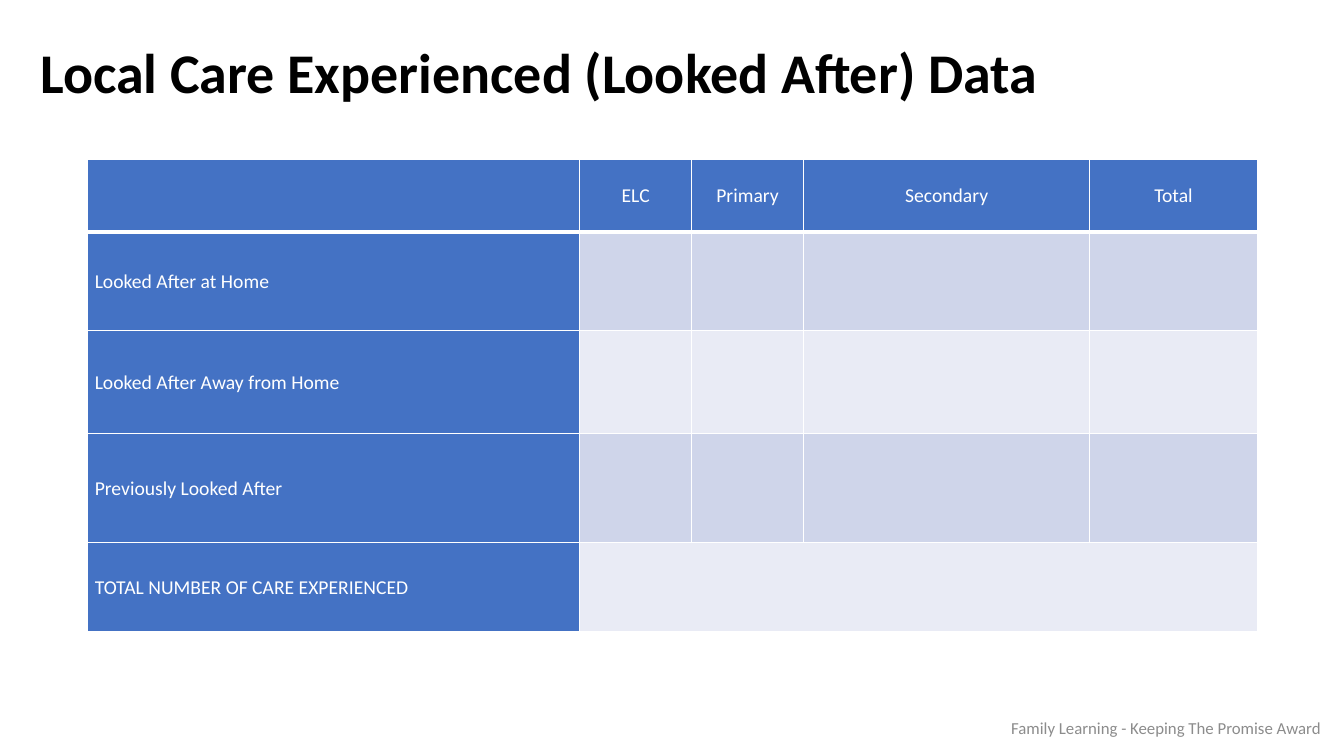
from dataclasses import dataclass

from lxml import etree
from pptx import Presentation
from pptx.dml.color import RGBColor
from pptx.enum.text import MSO_ANCHOR, MSO_AUTO_SIZE, PP_ALIGN
from pptx.oxml.ns import qn
from pptx.util import Inches, Pt

LEFT, CENTER, RIGHT = PP_ALIGN.LEFT, PP_ALIGN.CENTER, PP_ALIGN.RIGHT
TOP, MIDDLE = MSO_ANCHOR.TOP, MSO_ANCHOR.MIDDLE
NO_FIT = MSO_AUTO_SIZE.NONE
TITLE_ONLY = 5


@dataclass(frozen=True)
class Theme:
    font: str = "Calibri"
    ink: str = "000000"
    muted: str = "8C8C8C"
    white: str = "FFFFFF"
    heading: str = "4472C4"
    bands: tuple = ("CFD5EA", "E9EBF5")
    title_size: int = 40
    table_size: int = 14
    footer_size: int = 12
    thin_line: int = 1
    thick_line: int = 3


THEME = Theme()
STAGES = ["ELC", "Primary", "Secondary", "Total"]
GROUPS = [
    "Looked After at Home",
    "Looked After Away from Home",
    "Previously Looked After",
    "TOTAL NUMBER OF CARE EXPERIENCED",
]
COLUMN_WIDTHS = [4.88, 1.11, 1.11, 2.84, 1.66]
ROW_HEIGHTS = [0.72, 0.98, 1.02, 1.08, 0.89]


def place(shape, box):
    shape.left, shape.top, shape.width, shape.height = map(Inches, box)


def write(frame, text, size, color, align=LEFT, bold=False):
    para = frame.paragraphs[0]
    para.alignment = align
    para.line_spacing = 1.0
    span = para.add_run()
    span.text = text
    span.font.name = THEME.font
    span.font.size = Pt(size)
    span.font.bold = bold
    span.font.color.rgb = RGBColor.from_string(color)


def add_title(page, box, text):
    title = page.shapes.title
    place(title, box)
    frame = title.text_frame
    frame.word_wrap = True
    frame.auto_size = NO_FIT
    frame.vertical_anchor = TOP
    write(frame, text, THEME.title_size, THEME.ink, bold=True)


def add_footer(page, box, text):
    frame = page.shapes.add_textbox(*map(Inches, box)).text_frame
    frame.word_wrap = True
    frame.vertical_anchor = MIDDLE
    write(frame, text, THEME.footer_size, THEME.muted, RIGHT)


def set_borders(cell, bottom_width):
    properties = cell._tc.get_or_add_tcPr()
    widths = {"a:lnL": THEME.thin_line, "a:lnR": THEME.thin_line,
              "a:lnT": THEME.thin_line, "a:lnB": bottom_width}
    for index, (side, width) in enumerate(widths.items()):
        line = etree.Element(qn(side), w=str(Pt(width)))
        fill = etree.SubElement(line, qn("a:solidFill"))
        etree.SubElement(fill, qn("a:srgbClr"), val=THEME.white)
        properties.insert(index, line)


def style_cell(cell, row, column):
    is_heading = row == 0 or column == 0
    color = THEME.heading if is_heading else THEME.bands[(row - 1) % 2]
    cell.fill.solid()
    cell.fill.fore_color.rgb = RGBColor.from_string(color)
    cell.vertical_anchor = MIDDLE
    cell.margin_left = cell.margin_right = Inches(0.07)
    cell.margin_top, cell.margin_bottom = Inches(0.01), Inches(0)
    set_borders(cell, THEME.thick_line if row == 0 else THEME.thin_line)


def add_data_table(page, box):
    table = page.shapes.add_table(
        len(ROW_HEIGHTS), len(COLUMN_WIDTHS), *map(Inches, box)).table
    for column, width in zip(table.columns, COLUMN_WIDTHS):
        column.width = Inches(width)
    for row, height in zip(table.rows, ROW_HEIGHTS):
        row.height = Inches(height)
    for row in range(len(ROW_HEIGHTS)):
        for column in range(len(COLUMN_WIDTHS)):
            style_cell(table.cell(row, column), row, column)
    for column, stage in enumerate(STAGES, 1):
        write(table.cell(0, column).text_frame, stage,
              THEME.table_size, THEME.white, CENTER)
    for row, group in enumerate(GROUPS, 1):
        write(table.cell(row, 0).text_frame, group,
              THEME.table_size, THEME.white)
    last_row, last_column = len(GROUPS), len(STAGES)
    table.cell(last_row, 1).merge(table.cell(last_row, last_column))


def main():
    deck = Presentation()
    deck.slide_width, deck.slide_height = Inches(13.33), Inches(7.5)
    page = deck.slides.add_slide(deck.slide_layouts[TITLE_ONLY])
    add_title(page, (0.3, 0.32, 12.49, 1.11),
              "Local Care Experienced (Looked After) Data")
    add_footer(page, (8.74, 7.02, 4.5, 0.4),
               "Family Learning - Keeping The Promise Award ")
    add_data_table(page, (0.87, 1.58, sum(COLUMN_WIDTHS), sum(ROW_HEIGHTS)))
    deck.save("out.pptx")


if __name__ == "__main__":
    main()
